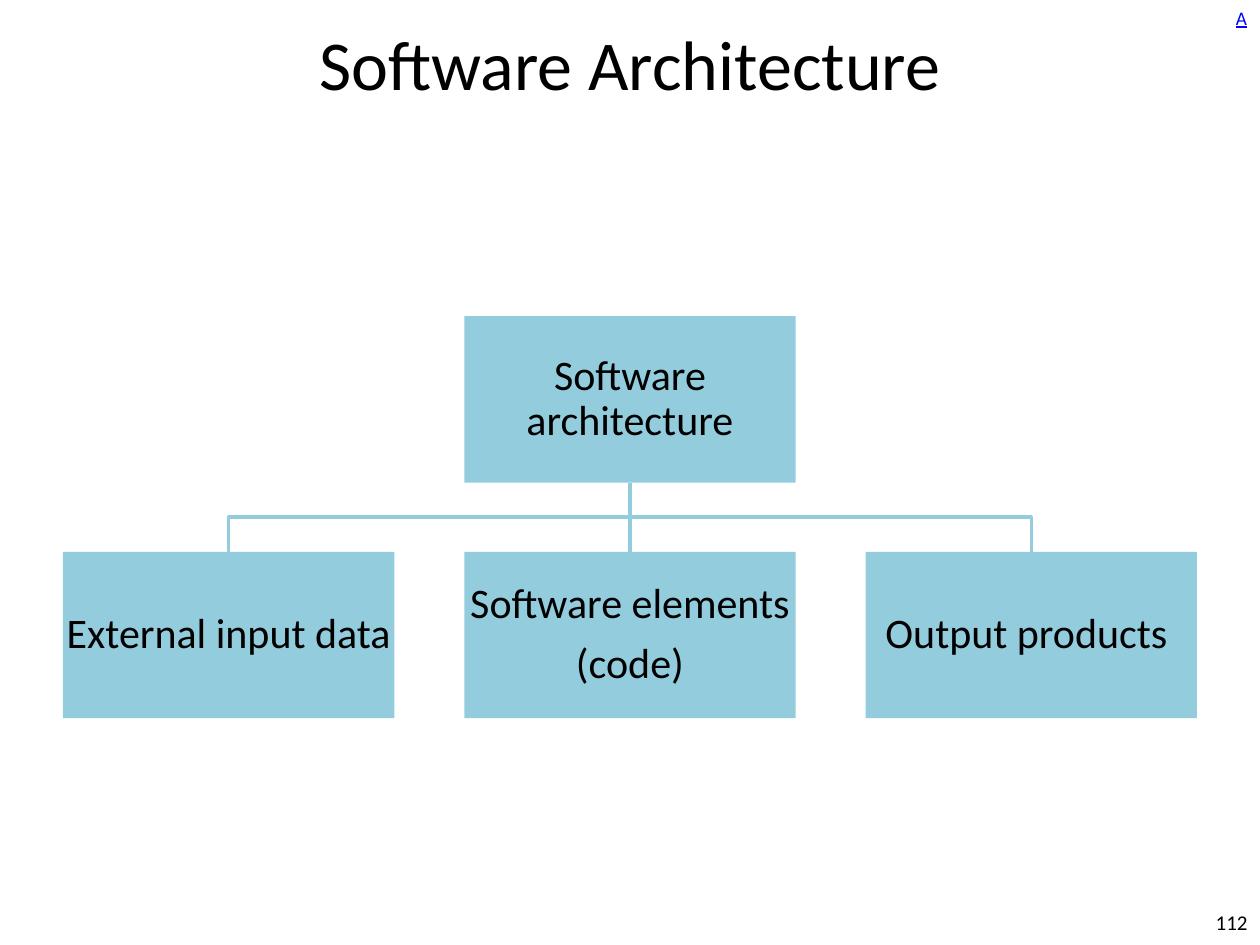
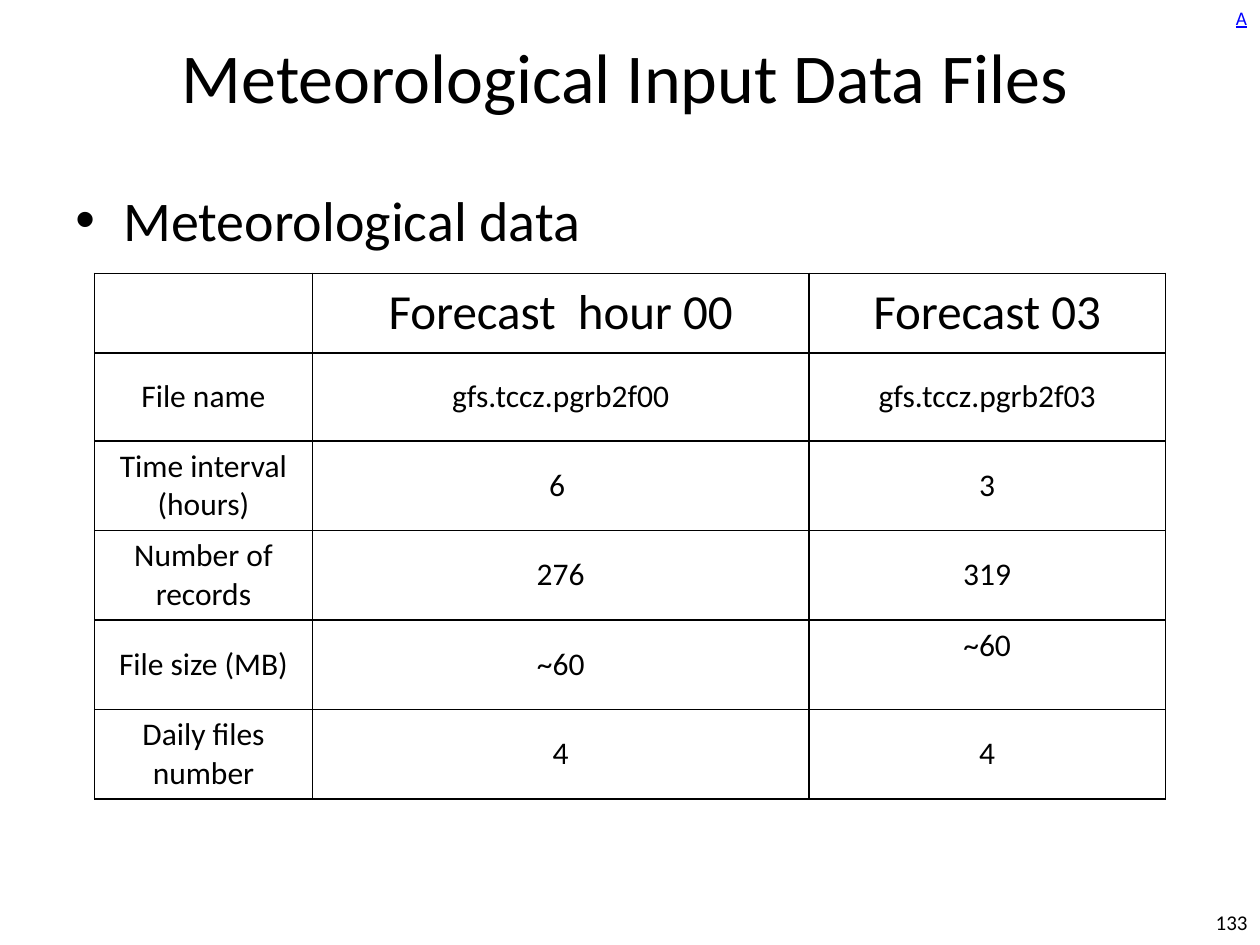
from dataclasses import dataclass

from lxml import etree
from pptx import Presentation
from pptx.dml.color import RGBColor
from pptx.enum.shapes import MSO_CONNECTOR, MSO_SHAPE
from pptx.enum.text import MSO_ANCHOR, PP_ALIGN
from pptx.oxml.ns import qn
from pptx.slide import Slide
from pptx.text.text import TextFrame
from pptx.util import Inches, Pt

LEFT, CENTER, RIGHT = PP_ALIGN.LEFT, PP_ALIGN.CENTER, PP_ALIGN.RIGHT
TOP, MIDDLE = MSO_ANCHOR.TOP, MSO_ANCHOR.MIDDLE
RECT, STRAIGHT = MSO_SHAPE.RECTANGLE, MSO_CONNECTOR.STRAIGHT

FONT = "Calibri"
BLACK, BLUE, AQUA = "000000", "0000FF", "93CDDD"
WIDTH, HEIGHT, STEP = 2.63, 1.32, 3.185
ROOT_TOP, LEAF_TOP = 2.51, 4.38


@dataclass(frozen=True)
class Style:
    """Looks of a paragraph."""
    size: float
    align: PP_ALIGN = CENTER
    color: str = BLACK
    under: bool = False
    lead: float = 1.0
    after: float = 0


@dataclass(frozen=True)
class Node:
    """One box of the tree, placed by its column."""
    lines: tuple[str, ...]
    col: int
    top: float

    @property
    def left(self) -> float:
        """Left edge in inches."""
        return 0.5 + self.col * STEP

    @property
    def mid(self) -> float:
        """Centre across in inches."""
        return self.left + WIDTH / 2


TITLE = Style(40)
TIGHT = Style(40, lead=0.85)
NUMBER = Style(12, RIGHT)
LINK = Style(11, LEFT, BLUE, True)
LABEL = Style(24, lead=0.9, after=8.4)
BULLET = Style(32, LEFT)
HEAD, CELL = Style(28), Style(18)

ROOT = Node(("Software architecture",), 1, ROOT_TOP)
LEAVES = [
    Node(("External input data",), 0, LEAF_TOP),
    Node(("Software elements", "(code)"), 1, LEAF_TOP),
    Node(("Output products ",), 2, LEAF_TOP),
]

COLS = (1.73, 3.94, 2.83)
ROWS = (0.63, 0.7, 0.71, 0.71, 0.71, 0.71)
DATA = [
    ("", "Forecast  hour 00", "Forecast 03"),
    ("File name", "gfs.tccz.pgrb2f00", "gfs.tccz.pgrb2f03"),
    ("Time interval\n(hours)", "6 ", "3"),
    ("Number of records", "276", "319"),
    ("File size (MB)", "~60", "~60"),
    ("Daily files number", "4", "4"),
]
HIGH_CELL = (4, 2)


def rgb(code: str) -> RGBColor:
    """Turn a hex string into a colour."""
    return RGBColor.from_string(code)


def write(frame: TextFrame, lines: tuple[str, ...], style: Style) -> None:
    """Write one paragraph per line."""
    for i, line in enumerate(lines):
        para = frame.add_paragraph() if i else frame.paragraphs[0]
        para.alignment = style.align
        para.line_spacing = style.lead
        para.space_before = Pt(0)
        para.space_after = Pt(style.after)
        run = para.add_run()
        run.text = line
        font = run.font
        font.name, font.size = FONT, Pt(style.size)
        font.color.rgb = rgb(style.color)
        if style.under:
            font.underline = True


def add_text(slide: Slide, box: tuple[float, ...], line: str, style: Style,
             anchor: MSO_ANCHOR = TOP, wrap: bool = True) -> TextFrame:
    """Add a text box with one line."""
    frame = slide.shapes.add_textbox(*map(Inches, box)).text_frame
    frame.word_wrap, frame.vertical_anchor = wrap, anchor
    write(frame, (line,), style)
    return frame


def add_slide(deck: Presentation, title: str, box: tuple[float, ...],
              style: Style, number: int) -> Slide:
    """Add a slide with its title, corner mark and number."""
    slide = deck.slides.add_slide(deck.slide_layouts[5])
    add_text(slide, (9.25, 7.12, 0.75, 0.4), str(number), NUMBER, MIDDLE)
    add_text(slide, (9.71, 0, 0.29, 0.29), "A", LINK, wrap=False)
    head = slide.shapes.title
    head.left, head.top, head.width, head.height = map(Inches, box)
    head.text_frame.vertical_anchor = MIDDLE
    write(head.text_frame, (title,), style)
    return slide


def add_node(slide: Slide, node: Node) -> None:
    """Draw a box of the tree with its label."""
    box = (node.left, node.top, WIDTH, HEIGHT)
    shape = slide.shapes.add_shape(RECT, *map(Inches, box))
    shape.shadow.inherit = False
    shape.fill.solid()
    shape.fill.fore_color.rgb = rgb(AQUA)
    shape.line.fill.background()
    frame = shape.text_frame
    frame.word_wrap, frame.vertical_anchor = True, MIDDLE
    frame.margin_left = frame.margin_right = Inches(0.02)
    frame.margin_top = frame.margin_bottom = Inches(0.02)
    write(frame, node.lines, LABEL)


def add_branch(slide: Slide, root: Node, leaf: Node) -> None:
    """Join the root to a leaf, with a bend where they differ in column."""
    low = root.top + HEIGHT
    bend = (low + leaf.top) / 2
    spots = [(root.mid, low), (root.mid, bend),
             (leaf.mid, bend), (leaf.mid, leaf.top)]
    spots = [(Inches(x), Inches(y)) for x, y in spots]
    if root.col == leaf.col:
        shape = slide.shapes.add_connector(STRAIGHT, *spots[0], *spots[-1])
    else:
        form = slide.shapes.build_freeform(*spots[0], scale=1.0)
        form.add_line_segments(spots[1:], close=False)
        shape = form.convert_to_shape()
        shape.fill.background()
    shape.line.color.rgb = rgb(AQUA)
    shape.line.width = Pt(2)
    etree.SubElement(shape._element.spPr, qn("a:effectLst"))


def add_edges(cell) -> None:
    """Give a cell thin black borders and no fill."""
    cell.fill.background()
    props = cell._tc.get_or_add_tcPr()
    for i, side in enumerate(("lnL", "lnR", "lnT", "lnB")):
        edge = etree.Element(qn(f"a:{side}"), w=str(Pt(1)))
        fill = etree.SubElement(edge, qn("a:solidFill"))
        etree.SubElement(fill, qn("a:srgbClr"), val=BLACK)
        props.insert(i, edge)


def add_grid(slide: Slide) -> None:
    """Draw the table of forecast files."""
    box = (0.75, 2.17, sum(COLS), sum(ROWS))
    table = slide.shapes.add_table(
        len(ROWS), len(COLS), *map(Inches, box)).table
    table.first_row = table.horz_banding = False
    for col, width in zip(table.columns, COLS):
        col.width = Inches(width)
    for r, (height, texts) in enumerate(zip(ROWS, DATA)):
        table.rows[r].height = Inches(height)
        for c, text in enumerate(texts):
            cell = table.cell(r, c)
            cell.vertical_anchor = TOP if (r, c) == HIGH_CELL else MIDDLE
            add_edges(cell)
            if text:
                write(cell.text_frame, tuple(text.split("\n")),
                      CELL if r else HEAD)


def add_bullet(slide: Slide) -> None:
    """Add the bulleted line above the table."""
    frame = add_text(slide, (0.5, 1.42, 9, 0.7), "Meteorological data", BULLET)
    props = frame.paragraphs[0]._p.get_or_add_pPr()
    props.set("marL", str(Inches(0.38)))
    props.set("indent", str(-Inches(0.38)))
    etree.SubElement(props, qn("a:buFont"), typeface="Arial")
    etree.SubElement(props, qn("a:buChar"), char="•")


def main() -> None:
    """Build and save the deck."""
    deck = Presentation()
    deck.slide_width, deck.slide_height = Inches(10), Inches(7.5)

    tree = add_slide(deck, "Software Architecture",
                     (0.5, 0.08, 9, 0.83), TITLE, 112)
    for leaf in LEAVES:
        add_branch(tree, ROOT, leaf)
    for node in [ROOT, *LEAVES]:
        add_node(tree, node)

    files = add_slide(deck, "Meteorological Input Data Files",
                      (0.5, 0.3, 8.92, 0.7), TIGHT, 133)
    add_bullet(files)
    add_grid(files)
    deck.save("out.pptx")


if __name__ == "__main__":
    main()
